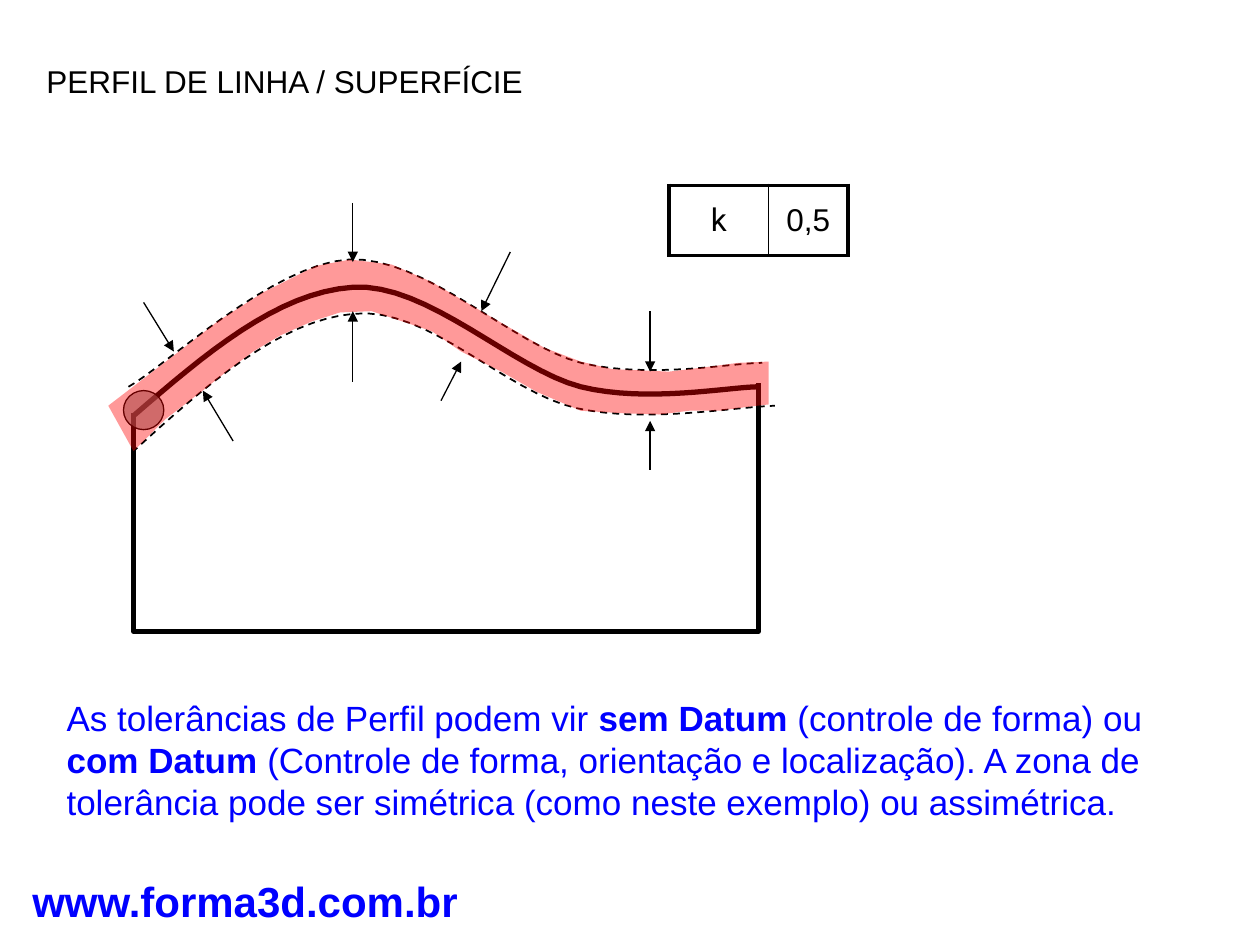
"""Builds the slide on line and surface profile tolerances."""
import dataclasses
import typing

import lxml.etree
import pptx
import pptx.dml.color
import pptx.enum.dml
import pptx.enum.shapes
import pptx.enum.text
import pptx.oxml.ns
import pptx.util

Inches = pptx.util.Inches
Pt = pptx.util.Pt
qn = pptx.oxml.ns.qn
Align = pptx.enum.text.PP_ALIGN
Point = tuple[float, float]


@dataclasses.dataclass(frozen=True)
class Theme:
    black: str = "000000"
    white: str = "FFFFFF"
    blue: str = "0000FF"
    zone: str = "FF0000"
    marker: str = "808080"
    font: str = "Arial"
    symbol_font: str = "Roboto"
    label_size: int = 18
    body_size: int = 20
    site_size: int = 24
    fine: float = 0.75
    thin: float = 1
    frame: float = 2.25
    thick: float = 3


class Run(typing.NamedTuple):
    text: str
    bold: bool = False


class Arrow(typing.NamedTuple):
    start: Point
    tip: Point


class Curve(typing.NamedTuple):
    nodes: list[Point]
    width: float
    dashed: bool = False


THEME = Theme()
CURVE_STEPS = 16

PROFILE_CURVES = [
    Curve([(1.06, 3.3), (1.63, 2.81), (2.2, 2.32), (2.8, 2.28), (3.39, 2.24),
           (4.07, 2.93), (4.61, 3.07), (5.14, 3.2), (5.79, 3.07), (6.02, 3.07)], THEME.thick),
]
LIMIT_CURVES = [
    Curve([(1.02, 3.07), (1.31, 2.91), (2.17, 2.09), (2.77, 2.06), (3.37, 2.03),
           (4.07, 2.74), (4.61, 2.88), (5.16, 3.01), (5.81, 2.88), (6.05, 2.88)], THEME.thin, True),
    Curve([(1.05, 3.59), (1.63, 3.06), (2.22, 2.54), (2.81, 2.49), (3.4, 2.43),
           (4.02, 3.12), (4.58, 3.24), (5.13, 3.36), (5.82, 3.23), (6.15, 3.22)], THEME.thin, True),
]
PART_SIDES = [(1.06, 3.28), (1.06, 5.01), (6.02, 5.01), (6.02, 3.04)]
TOLERANCE_ZONE = [
    (1.06, 3.58), (0.86, 3.22), (1.46, 2.76), (1.73, 2.55), (2.09, 2.32), (2.51, 2.11),
    (2.78, 2.06), (3.11, 2.1), (3.43, 2.24), (3.82, 2.47), (4.13, 2.65), (4.32, 2.76),
    (4.61, 2.87), (4.86, 2.93), (5.1, 2.94), (5.31, 2.95), (5.63, 2.91), (5.86, 2.88),
    (6.1, 2.87), (6.1, 3.21), (5.93, 3.23), (5.71, 3.26), (5.47, 3.26), (5.23, 3.29),
    (4.94, 3.28), (4.61, 3.26), (4.26, 3.11), (3.98, 2.95), (3.66, 2.79), (3.43, 2.63),
    (3.19, 2.55), (2.95, 2.47), (2.7, 2.48), (2.48, 2.55), (2.23, 2.66), (2.01, 2.79),
    (1.81, 2.94), (1.61, 3.1), (1.31, 3.33),
]
ARROWS = [
    Arrow((1.14, 2.4), (1.38, 2.79)), Arrow((1.85, 3.5), (1.61, 3.1)),
    Arrow((2.8, 1.61), (2.8, 2.08)), Arrow((2.8, 3.03), (2.8, 2.47)),
    Arrow((4.05, 2), (3.82, 2.47)), Arrow((3.5, 3.18), (3.66, 2.87)),
    Arrow((5.16, 2.47), (5.16, 2.95)), Arrow((5.16, 3.73), (5.16, 3.34)),
]
EXPLANATION = [
    Run("As tolerâncias de Perfil podem vir "),
    Run("sem Datum", True),
    Run(" (controle de forma) ou "),
    Run("com Datum", True),
    Run(" (Controle de forma, orientação e localização). A zona de tolerância "
        "pode ser simétrica (como neste exemplo) ou assimétrica."),
]


def rgb(color: str) -> pptx.dml.color.RGBColor:
    return pptx.dml.color.RGBColor.from_string(color)


def write(frame, runs: list[Run], *, size: int, color: str = THEME.black,
          font: str = THEME.font, align=Align.LEFT) -> None:
    paragraph = frame.paragraphs[0]
    paragraph.alignment = align
    for part in runs:
        run = paragraph.add_run()
        run.text = part.text
        run.font.name = font
        run.font.size = Pt(size)
        run.font.bold = part.bold
        run.font.color.rgb = rgb(color)


def add_text(slide, box: tuple[float, float, float, float], runs: list[Run],
             *, wrap: bool = False, **style) -> None:
    frame = slide.shapes.add_textbox(*map(Inches, box)).text_frame
    frame.word_wrap = wrap
    frame.auto_size = pptx.enum.text.MSO_AUTO_SIZE.SHAPE_TO_FIT_TEXT
    write(frame, runs, **style)


def set_line(line, width: float, dashed: bool = False) -> None:
    line.color.rgb = rgb(THEME.black)
    line.width = Pt(width)
    if dashed:
        line.dash_style = pptx.enum.dml.MSO_LINE.DASH


def set_fill(shape, color: str, opacity: int) -> None:
    shape.fill.solid()
    shape.fill.fore_color.rgb = rgb(color)
    tint = shape.element.spPr.find(qn("a:solidFill")).find(qn("a:srgbClr"))
    lxml.etree.SubElement(tint, qn("a:alpha"), val=str(opacity * 1000))


def add_outline(slide, points: list[Point], close: bool = False):
    start, *others = [(Inches(x), Inches(y)) for x, y in points]
    builder = slide.shapes.build_freeform(*start)
    builder.add_line_segments(others, close=close)
    outline = builder.convert_to_shape()
    outline.shadow.inherit = False
    return outline


def add_open_line(slide, points: list[Point], width: float, dashed: bool = False) -> None:
    outline = add_outline(slide, points)
    outline.fill.background()
    set_line(outline.line, width, dashed)


def curve_points(nodes: list[Point]) -> list[Point]:
    points = [nodes[0]]
    for first in range(0, len(nodes) - 1, 3):
        a, b, c, d = nodes[first:first + 4]
        for step in range(1, CURVE_STEPS + 1):
            t = step / CURVE_STEPS
            u = 1 - t
            weights = (u ** 3, 3 * u * u * t, 3 * u * t * t, t ** 3)
            points.append(tuple(sum(w * node[axis] for w, node in zip(weights, (a, b, c, d)))
                                for axis in (0, 1)))
    return points


def add_arrow(slide, arrow: Arrow) -> None:
    connector = slide.shapes.add_connector(
        pptx.enum.shapes.MSO_CONNECTOR.STRAIGHT, *map(Inches, arrow.start + arrow.tip))
    set_line(connector.line, THEME.fine)
    properties = connector.element.spPr
    lxml.etree.SubElement(properties.find(qn("a:ln")), qn("a:tailEnd"), type="triangle")
    lxml.etree.SubElement(properties, qn("a:effectLst"))


def add_border(cell, side: str, width: float) -> None:
    border = lxml.etree.SubElement(
        cell._tc.get_or_add_tcPr(), qn(f"a:ln{side}"), w=str(Pt(width)))
    paint = lxml.etree.SubElement(border, qn("a:solidFill"))
    lxml.etree.SubElement(paint, qn("a:srgbClr"), val=THEME.black)


def add_control_frame(slide) -> None:
    table = slide.shapes.add_table(1, 2, *map(Inches, (5.31, 1.47, 1.42, 0.56))).table
    table.first_row = table.horz_banding = False
    columns = [
        ("k", 0.79, THEME.symbol_font, {"R": THEME.thin}),
        ("0,5", 0.63, THEME.font, {"L": THEME.thin}),
    ]
    for index, (text, width, font, inner) in enumerate(columns):
        table.columns[index].width = Inches(width)
        cell = table.cell(0, index)
        for side in "LRTB":
            add_border(cell, side, inner.get(side, THEME.frame))
        cell.fill.solid()
        cell.fill.fore_color.rgb = rgb(THEME.white)
        cell.vertical_anchor = pptx.enum.text.MSO_ANCHOR.MIDDLE
        write(cell.text_frame, [Run(text)], size=THEME.label_size, font=font, align=Align.CENTER)


def add_marker(slide) -> None:
    marker = slide.shapes.add_shape(
        pptx.enum.shapes.MSO_SHAPE.OVAL, *map(Inches, (0.98, 3.1, 0.32, 0.31)))
    marker.shadow.inherit = False
    set_fill(marker, THEME.marker, 60)
    set_line(marker.line, THEME.fine)


def main() -> None:
    deck = pptx.Presentation()
    deck.slide_width, deck.slide_height = Inches(10), Inches(7.5)
    slide = deck.slides.add_slide(deck.slide_layouts[6])
    add_text(slide, (0.15, 6.9, 3.59, 0.5), [Run("www.forma3d.com.br", True)],
             size=THEME.site_size, color=THEME.blue, align=Align.CENTER)
    add_text(slide, (0.27, 0.44, 4.01, 0.4), [Run("PERFIL DE LINHA / SUPERFÍCIE")],
             size=THEME.label_size)
    add_control_frame(slide)
    for curve in PROFILE_CURVES:
        add_open_line(slide, curve_points(curve.nodes), curve.width)
    add_open_line(slide, PART_SIDES, THEME.thick)
    add_marker(slide)
    for curve in LIMIT_CURVES:
        add_open_line(slide, curve_points(curve.nodes), curve.width, curve.dashed)
    zone = add_outline(slide, TOLERANCE_ZONE, close=True)
    set_fill(zone, THEME.zone, 40)
    zone.line.fill.background()
    for arrow in ARROWS:
        add_arrow(slide, arrow)
    add_text(slide, (0.43, 5.48, 8.98, 1.11), EXPLANATION, wrap=True,
             size=THEME.body_size, color=THEME.blue)
    deck.save("out.pptx")


if __name__ == "__main__":
    main()
